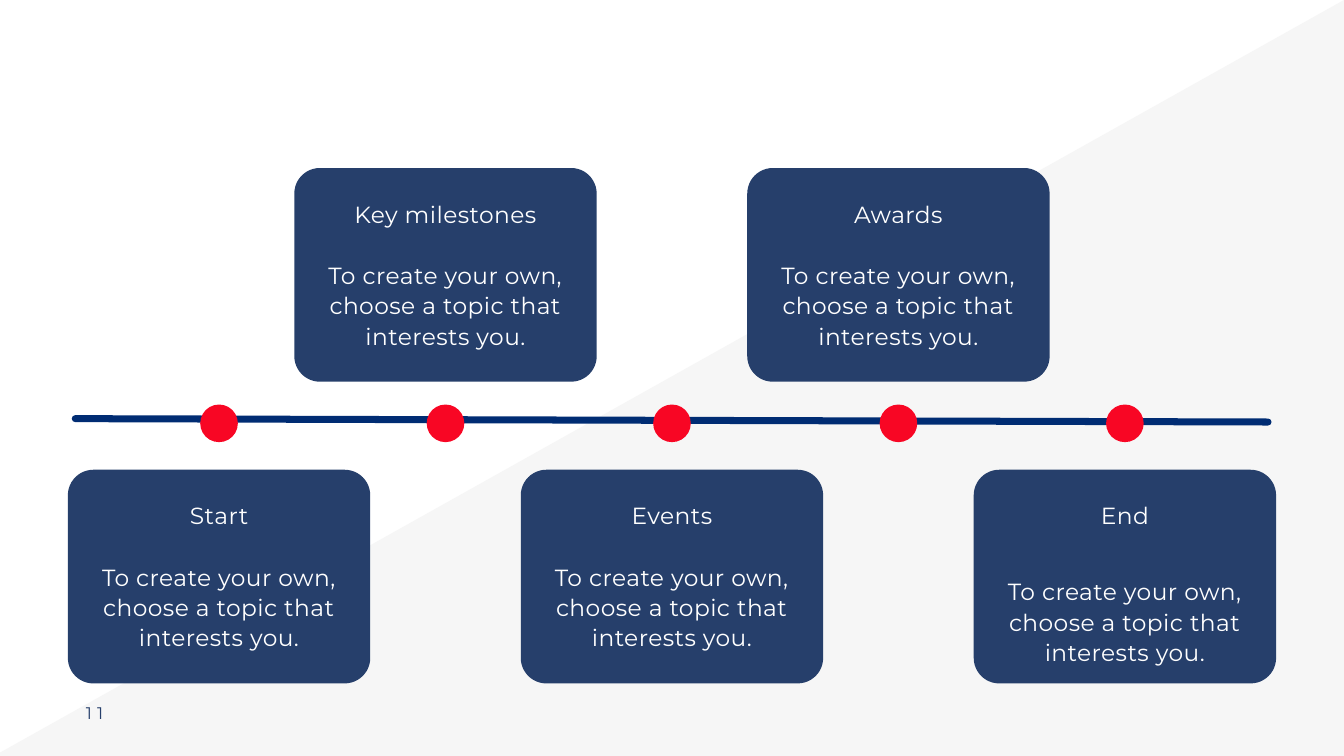
from dataclasses import dataclass

from lxml import etree
from pptx import Presentation
from pptx.dml.color import RGBColor
from pptx.enum import shapes, text
from pptx.oxml import ns
from pptx.util import Inches, Pt


@dataclass(frozen=True)
class Theme:
    font: str = "Montserrat"
    navy: RGBColor = RGBColor(0x26, 0x3F, 0x6B)
    axis: RGBColor = RGBColor(0x00, 0x2C, 0x73)
    red: RGBColor = RGBColor(0xF8, 0x06, 0x24)
    white: RGBColor = RGBColor(0xFF, 0xFF, 0xFF)
    backdrop: RGBColor = RGBColor(0xF6, 0xF6, 0xF6)
    card_size: float = 25
    card_leading: float = 32.5
    number_size: float = 18
    number_leading: float = 25.2


THEME = Theme()
BODY = "To create your own, choose a topic that interests you."
# Heading and distance from the card's top to its body text
MILESTONES = [
    ("Start", 1.35),
    ("Key milestones", 1.35),
    ("Events", 1.35),
    ("Awards", 1.35),
    ("End", 1.57),
]
FIRST_CENTER, STEP = 3.26, 3.37
UPPER_TOP, LOWER_TOP = 2.5, 6.99
CARD_W, CARD_H, CORNER = 4.5, 3.18, 0.38
TEXT_W = 3.54
DOT, DOT_TOP = 0.56, 6.02


def paint(shape, color):
    shape.shadow.inherit = False
    shape.fill.solid()
    shape.fill.fore_color.rgb = color
    shape.line.fill.background()


def add_backdrop(slide):
    builder = slide.shapes.build_freeform(Inches(20), 0)
    builder.add_line_segments(
        [(Inches(20), Inches(11.25)), (0, Inches(11.25)), (0, Inches(11.2))]
    )
    paint(builder.convert_to_shape(), THEME.backdrop)


def add_label(slide, words, left, top, width, height, size, leading, color,
              align, tracking):
    """Add unpadded text; tracking is in hundredths of a point."""
    box = slide.shapes.add_textbox(
        Inches(left), Inches(top), Inches(width), Inches(height)
    )
    frame = box.text_frame
    frame.margin_left = frame.margin_right = 0
    frame.margin_top = frame.margin_bottom = 0
    frame.word_wrap = True
    frame.text = words
    paragraph = frame.paragraphs[0]
    paragraph.alignment = align
    paragraph.line_spacing = Pt(leading)
    run = paragraph.runs[0]
    run.font.name = THEME.font
    run.font.size = Pt(size)
    run.font.color.rgb = color
    run.font._element.set("spc", str(tracking))


def add_axis(slide):
    axis = slide.shapes.add_connector(
        shapes.MSO_CONNECTOR.STRAIGHT,
        Inches(1.12), Inches(6.23), Inches(18.87), Inches(6.28),
    )
    axis.line.color.rgb = THEME.axis
    axis.line.width = Pt(7.5)
    axis.line._ln.set("cap", "rnd")
    etree.SubElement(axis._element.spPr, ns.qn("a:effectLst"))


def add_dot(slide, center):
    dot = slide.shapes.add_shape(
        shapes.MSO_SHAPE.OVAL,
        Inches(center - DOT / 2), Inches(DOT_TOP), Inches(DOT), Inches(DOT),
    )
    paint(dot, THEME.red)


def add_card(slide, center, top, heading, body_offset):
    card = slide.shapes.add_shape(
        shapes.MSO_SHAPE.ROUNDED_RECTANGLE,
        Inches(center - CARD_W / 2), Inches(top), Inches(CARD_W), Inches(CARD_H),
    )
    card.adjustments[0] = CORNER / CARD_H
    paint(card, THEME.navy)
    for words, offset, height in ((heading, 0.44, 0.43), (BODY, body_offset, 1.33)):
        add_label(slide, words, center - TEXT_W / 2, top + offset, TEXT_W, height,
                  THEME.card_size, THEME.card_leading, THEME.white,
                  text.PP_ALIGN.CENTER, 50)


def main():
    deck = Presentation()
    deck.slide_width, deck.slide_height = Inches(20), Inches(11.25)
    blank_layout = deck.slide_layouts[6]
    slide = deck.slides.add_slide(blank_layout)

    add_backdrop(slide)
    add_label(slide, "11", 1.28, 10.41, 0.63, 0.33, THEME.number_size,
              THEME.number_leading, THEME.navy, text.PP_ALIGN.JUSTIFY, 540)
    add_axis(slide)
    for index, (heading, body_offset) in enumerate(MILESTONES):
        center = FIRST_CENTER + index * STEP
        top = UPPER_TOP if index % 2 else LOWER_TOP
        add_dot(slide, center)
        add_card(slide, center, top, heading, body_offset)

    deck.save("out.pptx")


if __name__ == "__main__":
    main()
